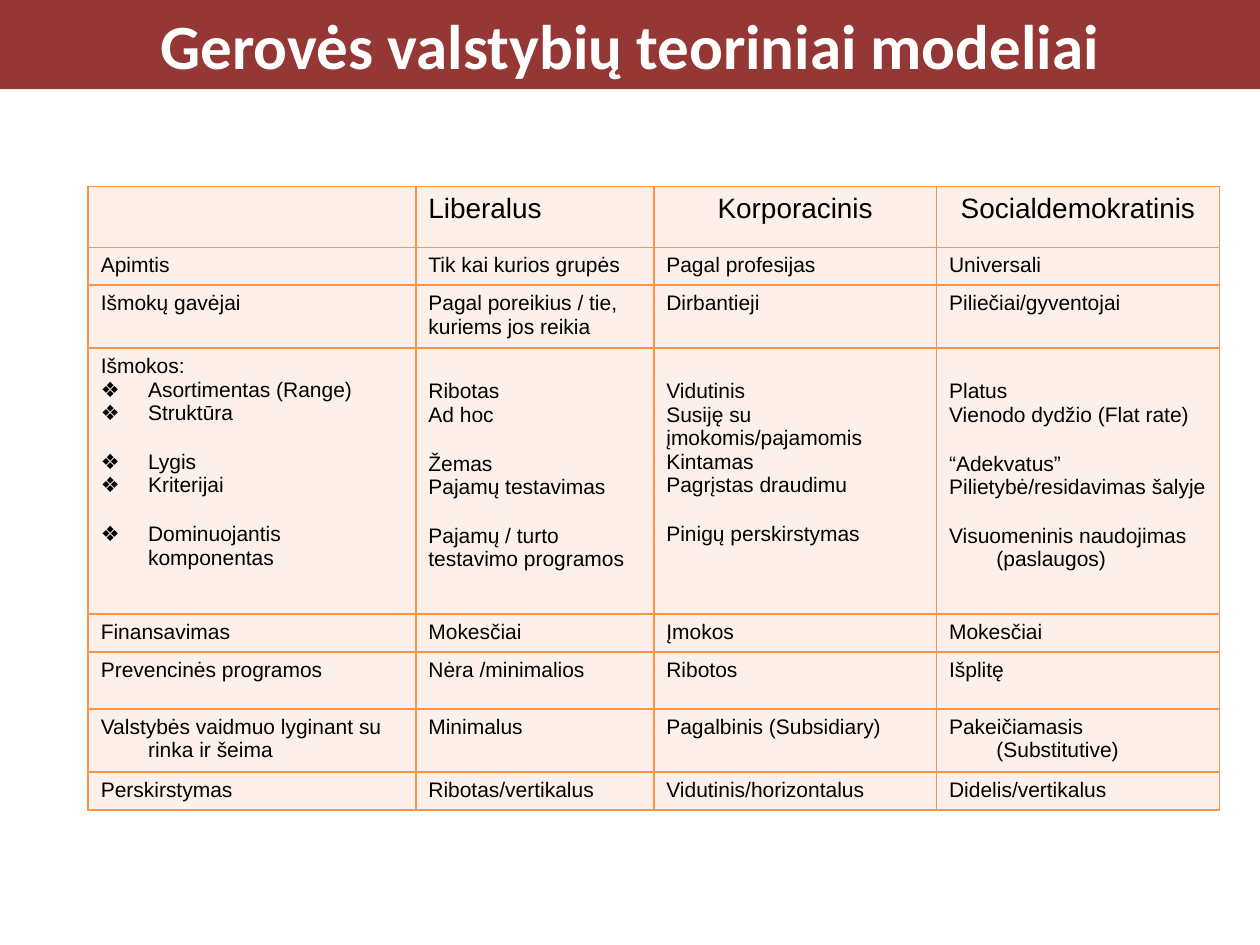
import pptx
import pptx.util
import pptx.dml.color
import pptx.enum.text
import pptx.oxml.ns
from lxml import etree

Pt = pptx.util.Pt
RGB = pptx.dml.color.RGBColor
ALIGN = pptx.enum.text.PP_ALIGN
ANCHOR = pptx.enum.text.MSO_ANCHOR
FIT = pptx.enum.text.MSO_AUTO_SIZE
qn = pptx.oxml.ns.qn

RED = RGB(0x95, 0x37, 0x35)
ORANGE = RGB(0xF7, 0x96, 0x46)
PEACH = RGB(0xFD, 0xEF, 0xE9)
BLACK = RGB(0, 0, 0)
WHITE = RGB(255, 255, 255)

COLS = [187.2, 136, 161.6, 161.6]
ROWS = [34.8, 21.6, 36, 152, 21.6, 32.6, 36, 21.6]

# An empty line in a cell stands for a gap before the next paragraph
DATA = [
    ["", "Liberalus", "Korporacinis", "Socialdemokratinis"],
    ["Apimtis", "Tik kai kurios grupės", "Pagal profesijas", "Universali"],
    ["Išmokų gavėjai", "Pagal poreikius / tie, kuriems jos reikia",
     "Dirbantieji", "Piliečiai/gyventojai"],
    ["Išmokos:\n❖Asortimentas (Range)\n❖Struktūra\n\n❖Lygis\n❖Kriterijai"
     "\n\n❖Dominuojantis komponentas",
     "\nRibotas\nAd hoc\n\nŽemas\nPajamų testavimas"
     "\n\nPajamų / turto testavimo programos",
     "\nVidutinis\nSusiję su įmokomis/pajamomis\nKintamas"
     "\nPagrįstas draudimu\n\nPinigų perskirstymas",
     "\nPlatus\nVienodo dydžio (Flat rate)\n\n“Adekvatus”"
     "\nPilietybė/residavimas šalyje"
     "\n\nVisuomeninis naudojimas (paslaugos)"],
    ["Finansavimas", "Mokesčiai", "Įmokos", "Mokesčiai"],
    ["Prevencinės programos", "Nėra /minimalios", "Ribotos", "Išplitę"],
    ["Valstybės vaidmuo lyginant su rinka ir šeima", "Minimalus",
     "Pagalbinis (Subsidiary)", "Pakeičiamasis (Substitutive)"],
    ["Perskirstymas", "Ribotas/vertikalus", "Vidutinis/horizontalus",
     "Didelis/vertikalus"],
]

# Paragraphs whose wrapped lines do not hang
FLAT = ("Pagal poreikius", "Pajamų / turto", "Susiję su")


class Deck:
    hang = 27
    gap = 14.4
    pad = 3.6

    def __init__(self):
        self.prs = pptx.Presentation()
        self.prs.slide_width, self.prs.slide_height = Pt(720), Pt(540)
        self.slide = self.prs.slides.add_slide(self.prs.slide_layouts[5])

    def run(self, para, text, font, size, color, bold=False):
        run = para.add_run()
        run.text = text
        run.font.name, run.font.size = font, Pt(size)
        run.font.color.rgb, run.font.bold = color, bold

    def title(self, text, height):
        box = self.slide.shapes.title
        box.left, box.top, box.width, box.height = 0, 0, Pt(720), Pt(height)
        box.fill.solid()
        box.fill.fore_color.rgb = RED
        frame = box.text_frame
        frame.auto_size = FIT.NONE
        frame.vertical_anchor = ANCHOR.MIDDLE
        para = frame.paragraphs[0]
        para.alignment = ALIGN.CENTER
        self.run(para, text, "Calibri", 36, WHITE, True)

    def border(self, cell):
        props = cell._tc.get_or_add_tcPr()
        for side in ("lnL", "lnR", "lnT", "lnB"):
            line = etree.SubElement(props, qn("a:" + side), w=str(Pt(1)))
            fill = etree.SubElement(line, qn("a:solidFill"))
            etree.SubElement(fill, qn("a:srgbClr"), val=str(ORANGE))

    def indent(self, para, bullet):
        props = para._p.get_or_add_pPr()
        props.set("marL", str(Pt(self.hang)))
        props.set("indent", str(-Pt(self.hang)))
        if bullet:
            etree.SubElement(props, qn("a:buFont"), typeface="Arial")
            etree.SubElement(props, qn("a:buChar"), char="❖")

    def cell(self, cell, text, size, align):
        self.border(cell)
        cell.fill.solid()
        cell.fill.fore_color.rgb = PEACH
        lines = text.split("\n")
        if len(lines) > 1 and not lines[0]:
            cell.margin_top = Pt(self.pad + self.gap)
            lines = lines[1:]
        frame = cell.text_frame
        para, space = frame.paragraphs[0], 0
        for i, line in enumerate(lines):
            if not line:
                space = self.gap
                continue
            if i:
                para = frame.add_paragraph()
            para.alignment = align
            para.space_before = Pt(space)
            space = 0
            if not line.startswith(FLAT):
                self.indent(para, line.startswith("❖"))
            self.run(para, line.lstrip("❖"), "Arial", size, BLACK)

    def table(self, left, top, cols, rows, data):
        table = self.slide.shapes.add_table(
            len(rows), len(cols), Pt(left), Pt(top),
            Pt(sum(cols)), Pt(sum(rows))).table
        table.first_row = table.horz_banding = False
        for col, width in zip(table.columns, cols):
            col.width = Pt(width)
        for row, height in zip(table.rows, rows):
            row.height = Pt(height)
        for r, texts in enumerate(data):
            for c, text in enumerate(texts):
                head = r == 0
                align = ALIGN.CENTER if head and c > 1 else ALIGN.LEFT
                self.cell(table.cell(r, c), text, 16 if head else 12, align)


def main():
    deck = Deck()
    # Title band
    deck.title("Gerovės valstybių teoriniai modeliai", 51)
    # Comparison of the three models
    deck.table(50.4, 106.6, COLS, ROWS, DATA)
    deck.prs.save("out.pptx")


if __name__ == "__main__":
    main()
